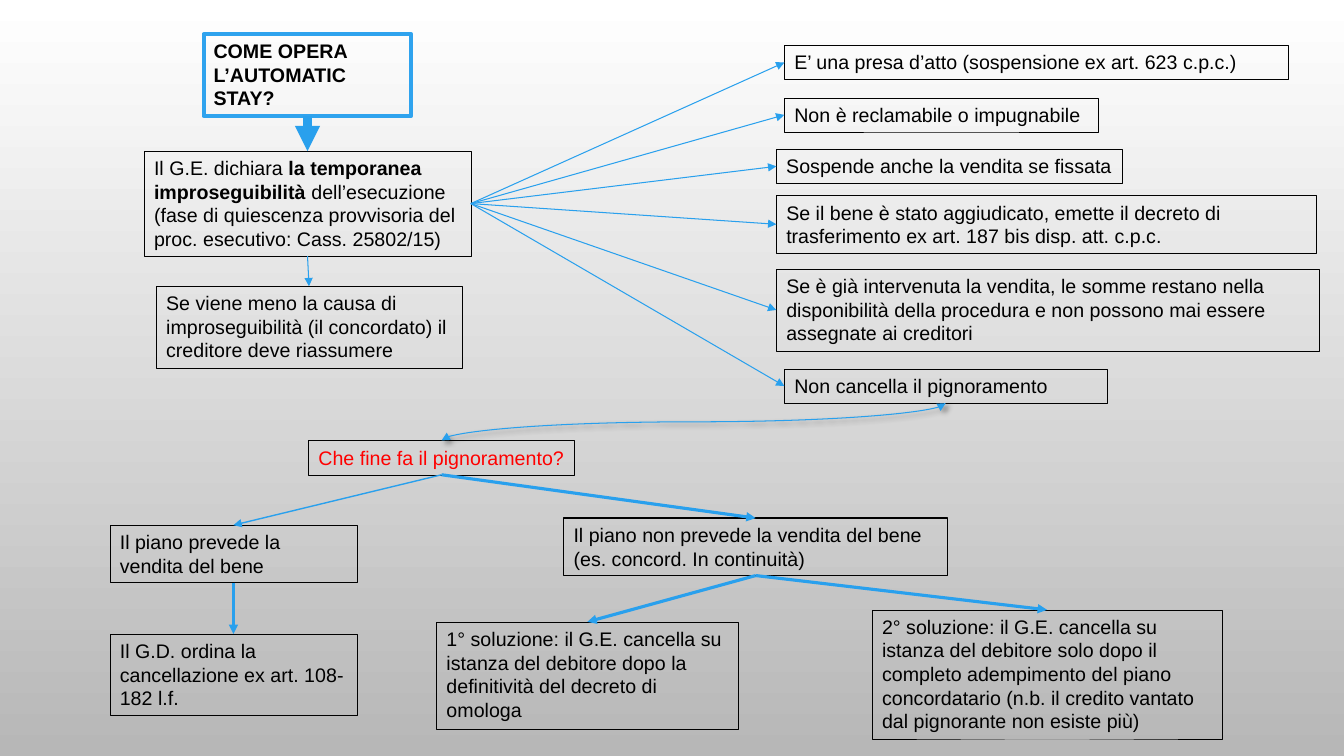
from lxml.etree import SubElement
from pptx import Presentation
from pptx.dml.color import RGBColor
from pptx.enum.shapes import MSO_CONNECTOR
from pptx.enum.text import MSO_AUTO_SIZE
from pptx.oxml.ns import qn
from pptx.util import Emu, Pt

PX = 9144  # 100 px to the inch
COLORS = {
    "text": "000000", "question": "FF0000", "frame": "2FA3EE",
    "arrow": "29A0ED", "bg_top": "FFFFFF", "bg_bottom": "B7B7B7",
}
TOP, LEFT, BOTTOM, RIGHT = range(4)  # connection sites of a rectangle


def px(n):
    return Emu(round(n * PX))


def rgb(name):
    return RGBColor.from_string(COLORS[name])


def add_text(p, text, size=14, bold=False, color="text"):
    r = p.add_run()
    r.text = text
    r.font.name = "Arial"
    r.font.size = Pt(size)
    r.font.bold = bold
    r.font.color.rgb = rgb(color)


def add_box(s, x, y, w, h, *runs, line="text", weight=0.25, **fmt):
    """Outlined text box; each run is a text or a (text, bold) pair."""
    sp = s.shapes.add_textbox(px(x), px(y), px(w), px(h))
    sp.line.color.rgb = rgb(line)
    sp.line.width = Pt(weight)
    tf = sp.text_frame
    tf.word_wrap = True
    tf.auto_size = MSO_AUTO_SIZE.SHAPE_TO_FIT_TEXT
    for run in runs:
        if isinstance(run, tuple):
            add_text(tf.paragraphs[0], run[0], bold=run[1])
        else:
            add_text(tf.paragraphs[0], run, **fmt)
    return sp


def style_arrow(cx, weight, heads=("tailEnd",)):
    """Colour the connector, add its heads and return its effect list."""
    cx.line.color.rgb = rgb("arrow")
    cx.line.width = Pt(weight)
    ln = cx.line._get_or_add_ln()
    for head in heads:
        SubElement(ln, qn("a:" + head), type="triangle")
    return SubElement(cx._element.spPr, qn("a:effectLst"))


def add_arrow(s, start, end, weight=0.75, sites=(BOTTOM, TOP)):
    cx = s.shapes.add_connector(MSO_CONNECTOR.STRAIGHT, 0, 0, 0, 0)
    cx.begin_connect(start, sites[0])
    cx.end_connect(end, sites[1])
    style_arrow(cx, weight)


def add_curve(s, lower, upper):
    """Double-headed S curve from the top of lower to the bottom of upper."""
    x1, y1 = lower.left + lower.width // 2, lower.top
    x2, y2 = upper.left + upper.width // 2, upper.top + upper.height
    mid_x, mid_y = (x1 + x2) // 2, (y1 + y2) // 2
    half_w, half_h = (x2 - x1) // 2, (y1 - y2) // 2
    cx = s.shapes.add_connector(
        MSO_CONNECTOR.CURVE, Emu(mid_x + half_h), Emu(mid_y + half_w),
        Emu(mid_x - half_h), Emu(mid_y - half_w))
    cx._element.spPr.find(qn("a:xfrm")).set("rot", str(90 * 60000))
    effects = style_arrow(cx, 0.75, ("headEnd", "tailEnd"))
    shadow = SubElement(effects, qn("a:outerShdw"), blurRad=str(Pt(4)),
                        dist=str(Pt(3)), dir=str(45 * 60000))
    color = SubElement(shadow, qn("a:srgbClr"), val=COLORS["text"])
    SubElement(color, qn("a:alpha"), val="40000")


def add_stay(s, x, y):
    """Title and steps of the stay; returns the declaration box."""
    title = add_box(s, x + 59, y, 206, 81, "COME OPERA L’AUTOMATIC STAY?",
                    line="frame", weight=3, bold=True)
    declaration = add_box(
        s, x, y + 116, 324, 104, "Il G.E. dichiara ",
        ("la temporanea improseguibilità", True),
        " dell’esecuzione (fase di quiescenza provvisoria del "
        "proc. esecutivo: Cass. 25802/15)")
    resumption = add_box(
        s, x + 12, y + 250, 303, 81,
        "Se viene meno la causa di improseguibilità (il concordato) il "
        "creditore deve riassumere")
    add_arrow(s, title, declaration, 6)
    add_arrow(s, declaration, resumption)
    return declaration


def add_effects(s, x, y, declaration):
    """Effects of the declaration; returns the last one."""
    effects = [
        (8, 0, 500, 34, "E’ una presa d’atto (sospensione ex art. 623 c.p.c.)"),
        (8, 52, 311, 34, "Non è reclamabile o impugnabile"),
        (0, 103, 343, 34, "Sospende anche la vendita se fissata"),
        (0, 149, 535, 57, "Se il bene è stato aggiudicato, emette il decreto di "
                          "trasferimento ex art. 187 bis disp. att. c.p.c."),
        (0, 222, 538, 81, "Se è già intervenuta la vendita, le somme restano nella "
                          "disponibilità della procedura e non possono mai essere "
                          "assegnate ai creditori"),
        (8, 321, 320, 34, "Non cancella il pignoramento"),
    ]
    for dx, dy, w, h, text in effects:
        sp = add_box(s, x + dx, y + dy, w, h, text)
        add_arrow(s, declaration, sp, sites=(RIGHT, LEFT))
    return sp


def add_fate(s, x, y):
    """Decision tree on the attachment; returns the question box."""
    question = add_box(s, x + 197, y, 264, 34, "Che fine fa il pignoramento?",
                       color="question")
    sale = add_box(s, x, y + 84, 245, 57, "Il piano prevede la vendita del bene")
    order = add_box(s, x, y + 192, 245, 81,
                    "Il G.D. ordina la cancellazione ex art. 108- 182 l.f.")
    no_sale = add_box(s, x + 450, y + 77, 381, 57,
                      "Il piano non prevede la vendita del bene "
                      "(es. concord. In continuità)", weight=1)
    first = add_box(s, x + 324, y + 180, 299, 106,
                    "1° soluzione: il G.E. cancella su istanza del debitore "
                    "dopo la definitività del decreto di omologa")
    second = add_box(s, x + 756, y + 168, 347, 128,
                     "2° soluzione: il G.E. cancella su istanza del debitore "
                     "solo dopo il completo adempimento del piano concordatario "
                     "(n.b. il credito vantato dal pignorante non esiste più)")
    add_arrow(s, question, sale, 1)
    for start, end in ((question, no_sale), (sale, order),
                       (no_sale, first), (no_sale, second)):
        add_arrow(s, start, end, 2.25)
    return question


def set_background(s):
    fill = s.background.fill
    fill.gradient()
    fill.gradient_angle = 270
    for stop, position, name in zip(fill.gradient_stops, (0, 1),
                                    ("bg_top", "bg_bottom")):
        stop.position = position
        stop.color.rgb = rgb(name)


def main():
    prs = Presentation()
    prs.slide_width, prs.slide_height = px(1333), px(750)
    s = prs.slides.add_slide(prs.slide_layouts[6])
    set_background(s)
    declaration = add_stay(s, 143, 34)
    no_cancellation = add_effects(s, 770, 45, declaration)
    question = add_fate(s, 109, 437)
    add_curve(s, question, no_cancellation)
    prs.save("out.pptx")


if __name__ == "__main__":
    main()
